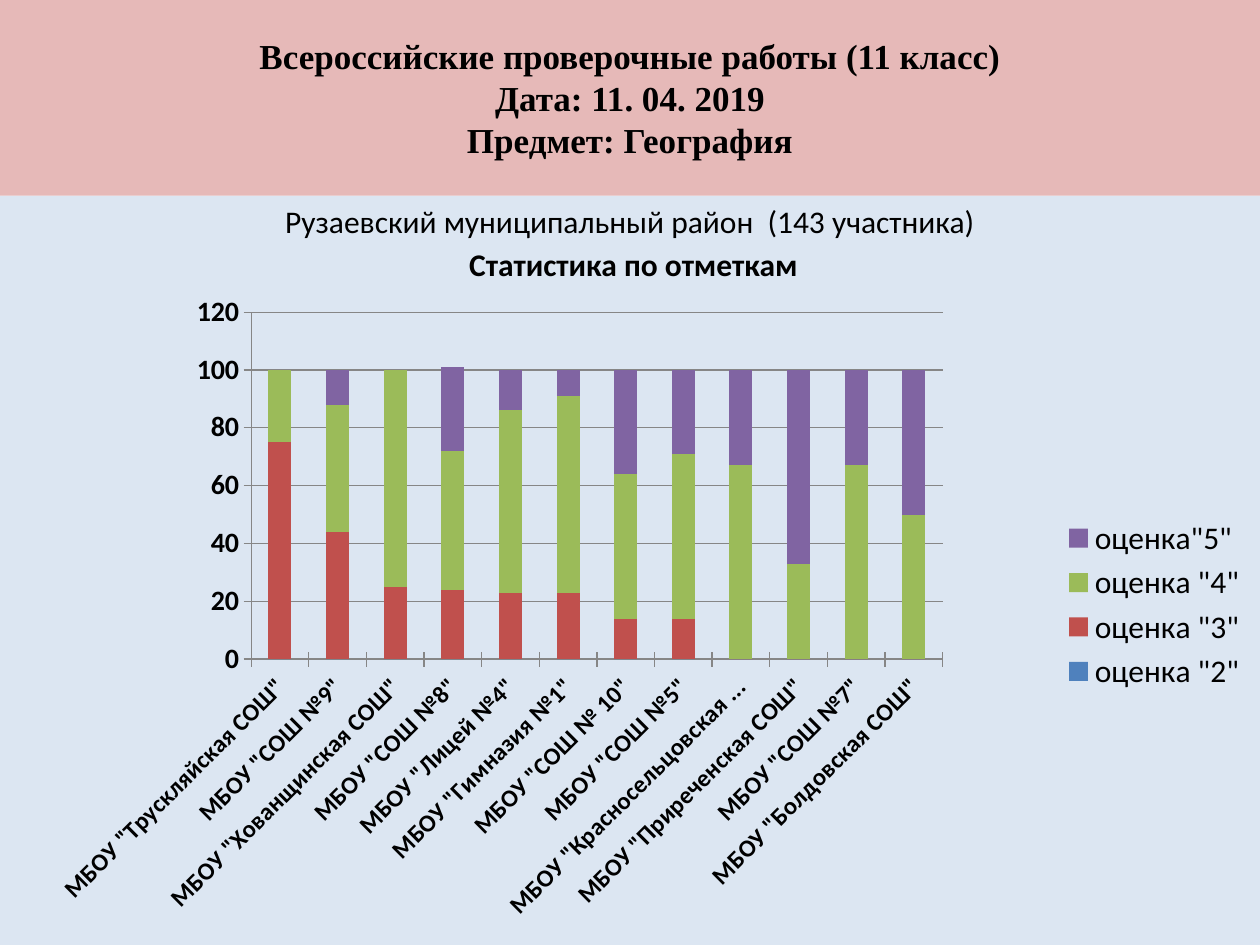
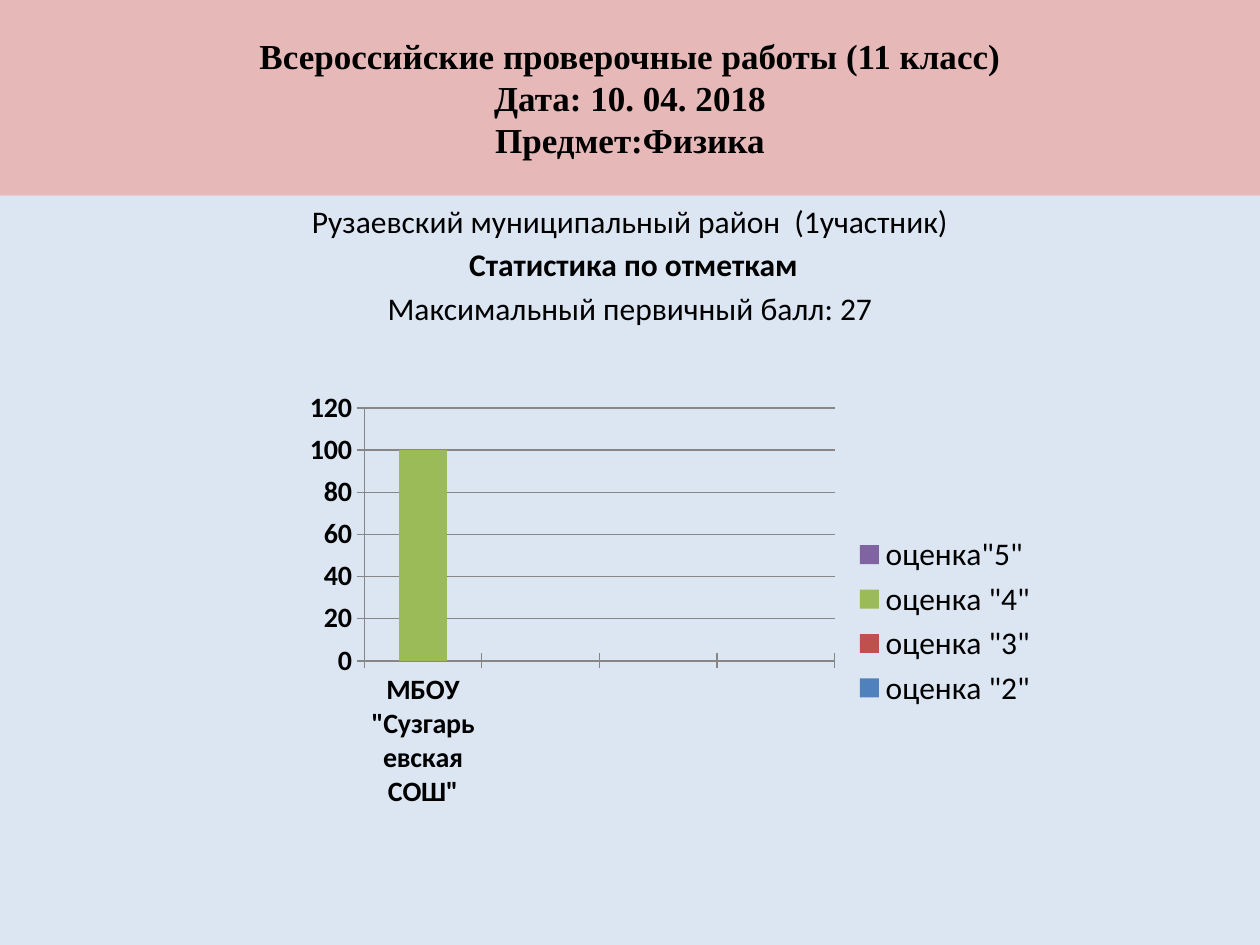
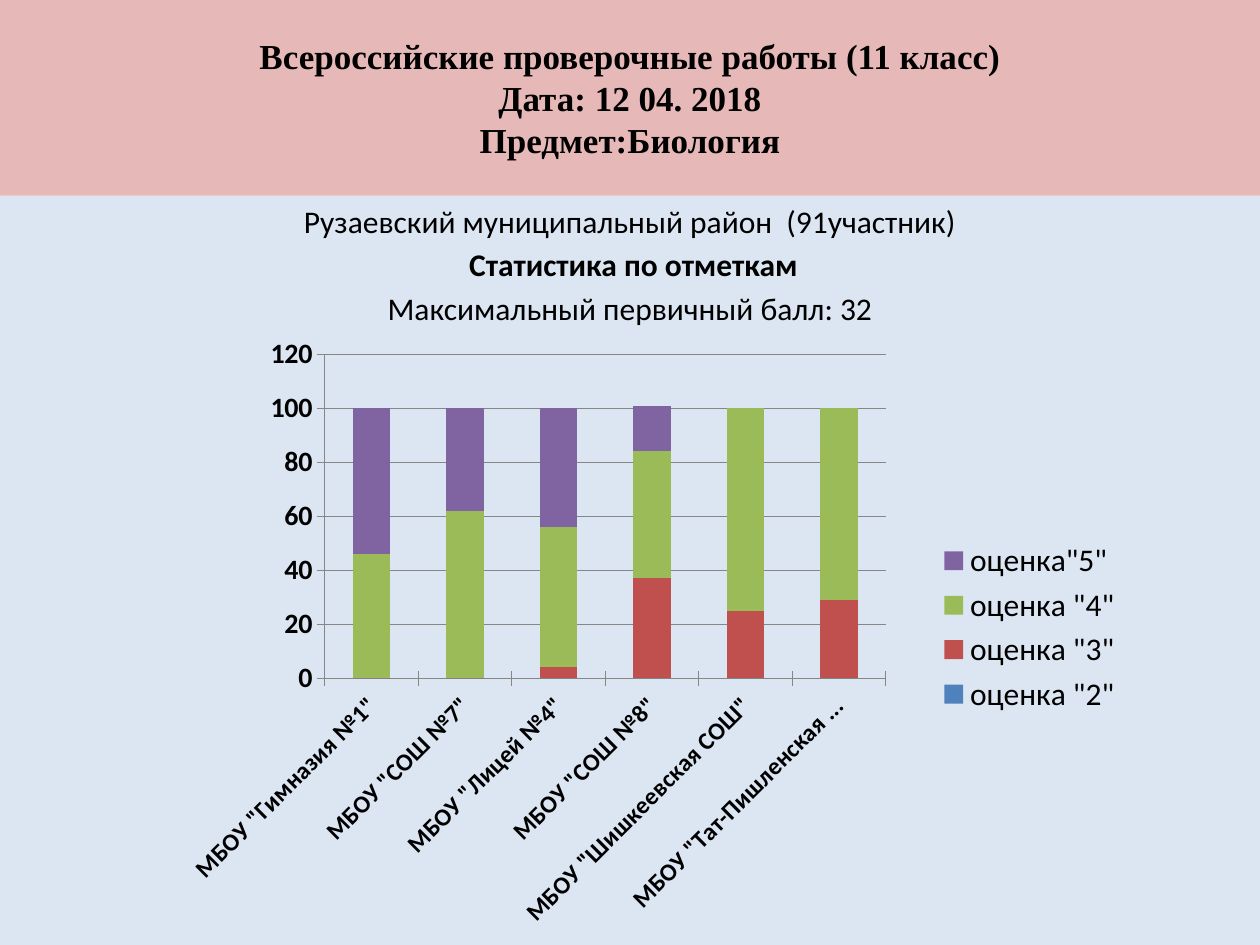
from dataclasses import dataclass

import pptx
import pptx.chart.data
import pptx.dml.color
import pptx.enum.chart
import pptx.enum.shapes
import pptx.enum.text
import pptx.oxml
import pptx.util

RGB = pptx.dml.color.RGBColor.from_string
XL = pptx.enum.chart


@dataclass(frozen=True)
class Theme:
    band: str = "E6B9B8"
    panel: str = "DCE6F2"
    ink: str = "000000"
    line: str = "868686"
    title_font: str = "Times New Roman"
    font: str = "Calibri"
    title_size: int = 20
    body_size: int = 18
    axis_size: int = 16
    small_axis_size: int = 14


THEME = Theme()
WIDTH, HEIGHT = pptx.util.Inches(10), pptx.util.Inches(7.5)
BAND_SHARE = 0.207
PLOT_WIDTH, PLOT_HEIGHT, PLOT_TOP = 0.56, 0.51, 0.07
GRADES = {
    'оценка "2"': "4F81BD",
    'оценка "3"': "C0504D",
    'оценка "4"': "9BBB59",
    'оценка"5"': "8064A2",
}
EXAM = "Всероссийские проверочные работы (11 класс)"
DISTRICT = "Рузаевский муниципальный район"
STATISTICS = " Статистика по отметкам"


def set_font(font, size, name=THEME.font, bold=False):
    font.size = pptx.util.Pt(size)
    font.name = name
    font.bold = bold
    font.color.rgb = RGB(THEME.ink)


def add_panel(s, top, height, fill):
    """Full-width rectangle; top and height are shares of the slide height."""
    sp = s.shapes.add_shape(
        pptx.enum.shapes.MSO_SHAPE.RECTANGLE,
        0, int(top * HEIGHT), WIDTH, int(height * HEIGHT))
    sp.shadow.inherit = False
    sp.fill.solid()
    sp.fill.fore_color.rgb = RGB(fill)
    sp.line.fill.background()
    return sp.text_frame


def add_title(s, date, subject):
    tf = add_panel(s, 0, BAND_SHARE, THEME.band)
    tf.vertical_anchor = pptx.enum.text.MSO_ANCHOR.MIDDLE
    p = tf.paragraphs[0]
    p.text = "\v".join([EXAM, date, subject])
    p.alignment = pptx.enum.text.PP_ALIGN.CENTER
    for r in p.runs:
        set_font(r.font, THEME.title_size, THEME.title_font, bold=True)


def add_body(s, lines):
    tf = add_panel(s, BAND_SHARE, 1 - BAND_SHARE, THEME.panel)
    tf.vertical_anchor = pptx.enum.text.MSO_ANCHOR.TOP
    tf.text = "\n".join(lines)
    for p in tf.paragraphs:
        p.alignment = pptx.enum.text.PP_ALIGN.CENTER
        p.space_after = pptx.util.Pt(3.2)
        for r in p.runs:
            set_font(r.font, THEME.body_size, bold=p.text == STATISTICS)


def style_axis(axis, size):
    set_font(axis.tick_labels.font, size, bold=True)
    axis.major_tick_mark = XL.XL_TICK_MARK.CROSS
    axis.format.line.color.rgb = RGB(THEME.line)
    axis.format.line.width = pptx.util.Pt(0.75)


def place_plot(chart, left):
    """Fix the inner plot area, in shares of the chart frame."""
    area = chart.element.chart.plotArea
    for old in area.xpath("c:layout"):
        area.remove(old)
    sizes = {"x": left, "y": PLOT_TOP, "w": PLOT_WIDTH, "h": PLOT_HEIGHT}
    modes = "".join(f'<c:{k}Mode val="edge"/>' for k in "xy")
    values = "".join(f'<c:{k} val="{v}"/>' for k, v in sizes.items())
    area.insert(0, pptx.oxml.parse_xml(
        '<c:layout xmlns:c="http://schemas.openxmlformats.org/drawingml/2006/chart">'
        f'<c:manualLayout><c:layoutTarget val="inner"/>{modes}{values}'
        '</c:manualLayout></c:layout>'))


def add_grade_chart(s, frame, schools, plot_left, label_size):
    """Stacked columns; frame is left, top, width, height in slide shares."""
    data = pptx.chart.data.CategoryChartData()
    data.categories = [name for name, _ in schools]
    for i, grade in enumerate(GRADES):
        data.add_series(grade, [marks[i] for _, marks in schools])
    box = [int(share * full) for share, full in zip(frame, (WIDTH, HEIGHT) * 2)]
    chart = s.shapes.add_chart(
        XL.XL_CHART_TYPE.COLUMN_STACKED, *box, data).chart
    set_font(chart.font, THEME.body_size)
    chart.has_title = False
    chart.has_legend = True
    chart.legend.position = XL.XL_LEGEND_POSITION.RIGHT
    chart.legend.include_in_layout = False
    set_font(chart.legend.font, THEME.body_size)

    plot = chart.plots[0]
    plot.gap_width, plot.overlap = 150, 100
    plot.vary_by_categories = False
    for series, color in zip(plot.series, GRADES.values()):
        series.format.fill.solid()
        series.format.fill.fore_color.rgb = RGB(color)

    style_axis(chart.category_axis, label_size)
    axis = chart.value_axis
    style_axis(axis, THEME.axis_size)
    axis.minimum_scale, axis.maximum_scale, axis.major_unit = 0, 120, 20
    axis.has_major_gridlines = True
    axis.major_gridlines.format.line.color.rgb = RGB(THEME.line)
    axis.major_gridlines.format.line.width = pptx.util.Pt(0.75)
    place_plot(chart, plot_left)


def add_subject_slide(prs, date, subject, lines, frame, schools,
                      plot_left=0.183, label_size=THEME.small_axis_size):
    s = prs.slides.add_slide(prs.slide_layouts[6])
    add_body(s, lines)
    add_title(s, date, subject)
    add_grade_chart(s, frame, schools, plot_left, label_size)


GEOGRAPHY = [
    ('МБОУ "Трускляйская СОШ"', (0, 75, 25, 0)),
    ('МБОУ "СОШ №9"', (0, 44, 44, 12)),
    ('МБОУ "Хованщинская СОШ"', (0, 25, 75, 0)),
    ('МБОУ "СОШ №8"', (0, 24, 48, 29)),
    ('МБОУ "Лицей №4"', (0, 23, 63, 14)),
    ('МБОУ "Гимназия №1"', (0, 23, 68, 9)),
    ('МБОУ "СОШ № 10"', (0, 14, 50, 36)),
    ('МБОУ "СОШ №5"', (0, 14, 57, 29)),
    ('МБОУ "Красносельцовская СОШ"', (0, 0, 67, 33)),
    ('МБОУ "Приреченская СОШ"', (0, 0, 33, 67)),
    ('МБОУ "СОШ №7"', (0, 0, 67, 33)),
    ('МБОУ "Болдовская СОШ"', (0, 0, 50, 50)),
]
EMPTY_SLOT = ("", (None,) * len(GRADES))
PHYSICS = [('МБОУ "Сузгарьевская СОШ"', (0, 0, 100, 0))] + [EMPTY_SLOT] * 3
BIOLOGY = [
    ('МБОУ "Гимназия №1"', (0, 0, 46, 54)),
    ('МБОУ "СОШ №7"', (0, 0, 62, 38)),
    ('МБОУ "Лицей №4"', (0, 4, 52, 44)),
    ('МБОУ "СОШ №8"', (0, 37, 47, 17)),
    ('МБОУ "Шишкеевская СОШ"', (0, 25, 75, 0)),
    ('МБОУ "Тат-Пишленская СОШ"', (0, 29, 71, 0)),
]


def main():
    prs = pptx.Presentation()
    prs.slide_width, prs.slide_height = WIDTH, HEIGHT
    add_subject_slide(
        prs, "Дата: 11. 04. 2019", "Предмет: География",
        [f"{DISTRICT}  (143 участника)", STATISTICS],
        (0.02, 0.28, 0.98, 0.72), GEOGRAPHY)
    add_subject_slide(
        prs, "Дата: 10. 04. 2018", "Предмет:Физика",
        [f"{DISTRICT}  (1участник)", STATISTICS,
         "Максимальный первичный балл: 27"],
        (0.167, 0.395, 0.667, 0.525), PHYSICS, label_size=THEME.axis_size)
    add_subject_slide(
        prs, "Дата: 12 04. 2018", "Предмет:Биология",
        [f"{DISTRICT}  (91участник)", STATISTICS,
         "Максимальный первичный балл: 32"],
        (0.106, 0.328, 0.795, 0.672), BIOLOGY, plot_left=0.191)
    prs.save("out.pptx")


if __name__ == "__main__":
    main()
